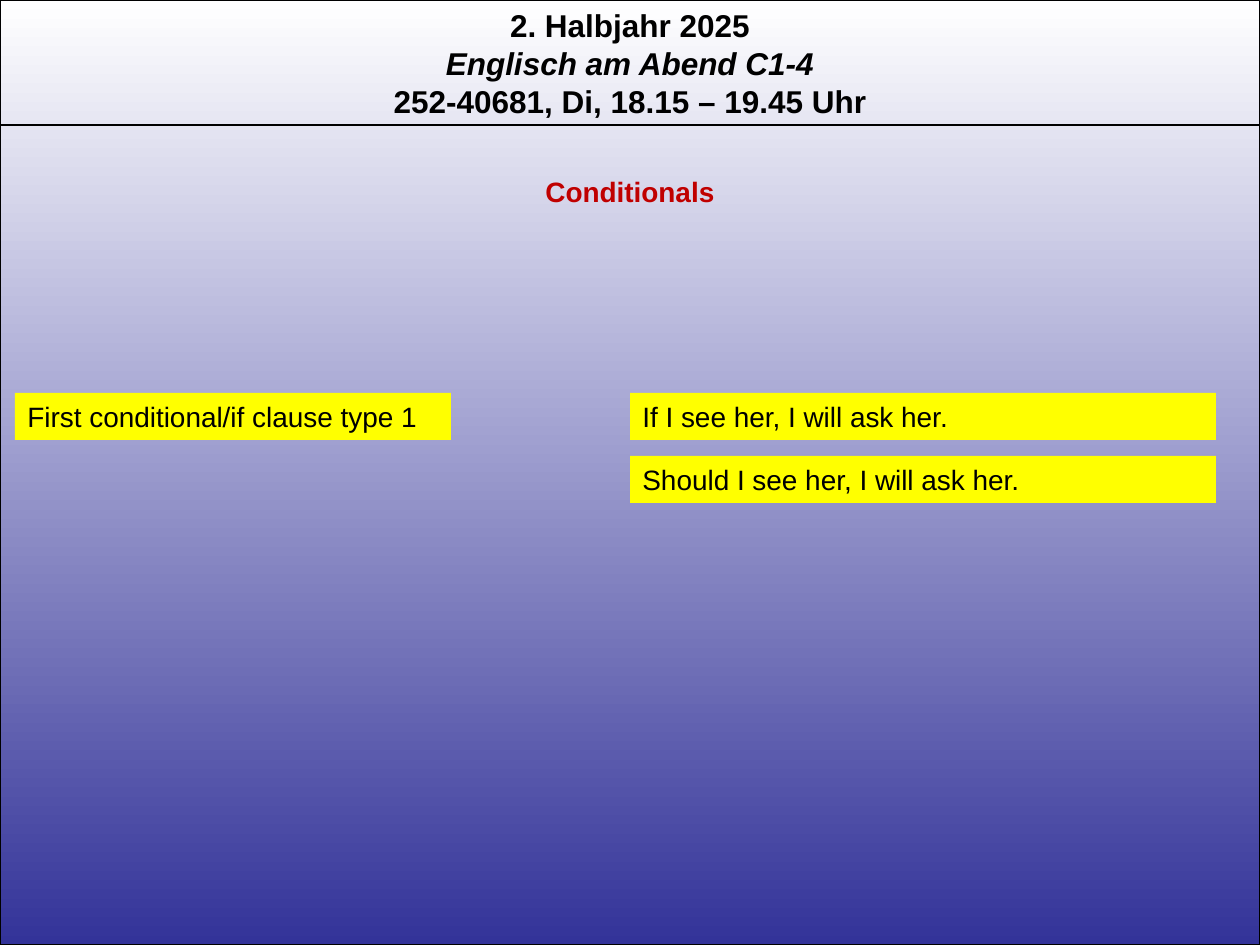
from lxml.etree import SubElement
from pptx import Presentation
from pptx.dml.color import RGBColor
from pptx.enum.shapes import MSO_CONNECTOR as Connector, MSO_SHAPE as Shape
from pptx.enum.text import MSO_ANCHOR as Anchor, MSO_AUTO_SIZE as AutoSize, PP_ALIGN as Align
from pptx.oxml.ns import qn
from pptx.util import Emu, Pt

PX_PER_INCH = 126
SLIDE_W, SLIDE_H = 1260, 945
BLACK = RGBColor(0, 0, 0)
WHITE = RGBColor(255, 255, 255)
INDIGO = RGBColor(0x33, 0x33, 0x99)
RED = RGBColor(0xC0, 0, 0)
YELLOW = RGBColor(255, 255, 0)

BAR_H, BAR_PITCH = 47, 63
BARS_TOP = 393


def px(length):
    return Emu(round(length * 914400 / PX_PER_INCH))


def box(*lengths):
    return [px(length) for length in lengths]


def write(frame, lines, size, color=BLACK, bold=False, align=Align.LEFT):
    frame.word_wrap = True
    frame.auto_size = AutoSize.SHAPE_TO_FIT_TEXT
    frame.vertical_anchor = Anchor.TOP
    frame.text = "\n".join(lines)
    for paragraph in frame.paragraphs:
        paragraph.alignment = align
        for run in paragraph.runs:
            run.font.name = "Arial"
            run.font.size = Pt(size)
            run.font.bold = bold
            run.font.color.rgb = color


def add_backdrop(slide):
    backdrop = slide.shapes.add_shape(Shape.RECTANGLE, *box(0, 0, SLIDE_W, SLIDE_H))
    backdrop.shadow.inherit = False
    backdrop.fill.gradient()
    backdrop.fill.gradient_angle = 270  # top to bottom
    for stop, color in zip(backdrop.fill.gradient_stops, (WHITE, INDIGO)):
        stop.color.rgb = color
    backdrop.line.color.rgb = BLACK
    backdrop.line.width = Pt(0.75)


def add_heading(slide, top, height, lines, size, color=BLACK):
    heading = slide.shapes.add_textbox(*box(0, top, SLIDE_W, height))
    write(heading.text_frame, lines, size, color, bold=True, align=Align.CENTER)
    return heading.text_frame


def add_rule(slide, y):
    rule = slide.shapes.add_connector(Connector.STRAIGHT, *box(0, y, SLIDE_W, y))
    rule.line.color.rgb = BLACK
    rule.line.width = Pt(0.75)
    SubElement(rule._element.spPr, qn("a:effectLst"))


def add_bar(slide, left, row, width, text):
    top = BARS_TOP + row * BAR_PITCH
    bar = slide.shapes.add_shape(Shape.RECTANGLE, *box(left, top, width, BAR_H))
    bar.shadow.inherit = False
    bar.fill.solid()
    bar.fill.fore_color.rgb = YELLOW
    bar.line.fill.background()
    write(bar.text_frame, [text], 16)


def main():
    prs = Presentation()
    prs.slide_width, prs.slide_height = box(SLIDE_W, SLIDE_H)
    slide = prs.slides.add_slide(prs.slide_layouts[6])

    # Background and course header
    add_backdrop(slide)
    course = add_heading(slide, 0, 127, [
        "2. Halbjahr 2025",
        "Englisch am Abend C1-4",
        "252-40681, Di, 18.15 – 19.45 Uhr",
    ], 18)
    course.paragraphs[1].runs[0].font.italic = True
    add_rule(slide, 125)

    # Topic
    add_heading(slide, 168, BAR_H, ["Conditionals"], 16, RED)

    # Conditional type and its example sentences
    add_bar(slide, 15, 0, 436, "First conditional/if clause type 1")
    examples = ["If I see her, I will ask her.", "Should I see her, I will ask her."]
    for row, example in enumerate(examples):
        add_bar(slide, 630, row, 586, example)

    prs.save("out.pptx")


if __name__ == "__main__":
    main()
